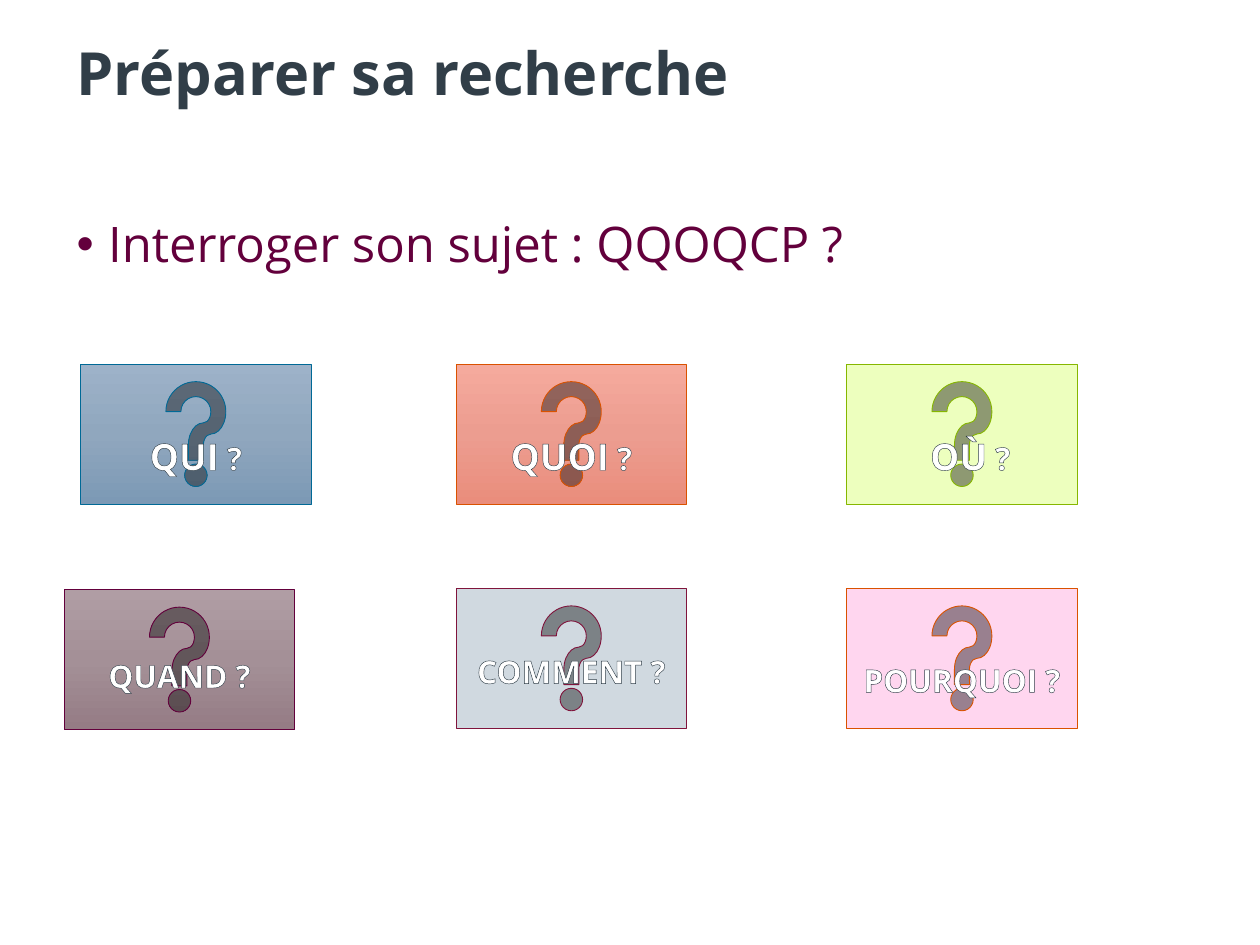
"""Build the QQOQCP slide: six question buttons under a title and a bullet."""
from lxml import etree
from pptx import Presentation
from pptx.dml.color import RGBColor
from pptx.enum.shapes import MSO_SHAPE
from pptx.enum.text import MSO_ANCHOR, PP_ALIGN
from pptx.oxml.ns import qn
from pptx.util import Inches, Pt

HELP_BUTTON = MSO_SHAPE.ACTION_BUTTON_HELP
MIDDLE, TOP = MSO_ANCHOR.MIDDLE, MSO_ANCHOR.TOP
CENTER = PP_ALIGN.CENTER

COLORS = {
    "white": "FFFFFF", "slate": "313E48", "outline": "303E48", "plum": "63003C",
    "blue": "006996", "orange": "DA5200", "green": "86B700", "wine": "80143C",
    "lime": "EDFFBE", "pink": "FFD6EF", "mist": "D0D9E0",
}
GRADIENTS = {
    "blue fade": ["9DB2C9", "90A7BE", "7C99B5"],
    "coral fade": ["F5AA9D", "EC9D90", "EA8D7C"],
    "plum fade": ["B09DA4", "A49097", "957C85"],
}


class QuestionSlide:
    """Hold the style and the current slide."""

    font_name = "Open Sans"
    button_width, button_height = 1.83, 1.11

    def __init__(self, presentation):
        self.slide = presentation.slides.add_slide(presentation.slide_layouts[6])

    def color(self, name):
        return RGBColor.from_string(COLORS[name])

    def style(self, font, size, color, bold=False):
        font.name, font.size, font.bold = self.font_name, Pt(size), bold
        font.color.rgb = self.color(color)

    def text(self, words, top, height, size, color, bold=False, anchor=TOP, bullet=False):
        box = self.slide.shapes.add_textbox(Inches(0.51), Inches(top), Inches(8.35), Inches(height))
        frame = box.text_frame
        frame.word_wrap, frame.vertical_anchor = True, anchor
        frame.text = words
        paragraph = frame.paragraphs[0]
        paragraph.line_spacing = 0.9
        if bullet:
            box.fill.solid()
            box.fill.fore_color.rgb = self.color("white")
            properties = paragraph._p.get_or_add_pPr()
            properties.set("marL", str(Inches(0.25)))
            properties.set("indent", str(-Inches(0.25)))
            etree.SubElement(properties, qn("a:buFont"), typeface="Arial")
            etree.SubElement(properties, qn("a:buChar"), char="•")
        self.style(paragraph.runs[0].font, size, color, bold)

    def gradient(self, button, stops):
        button.fill.gradient()
        button.fill.gradient_angle = 270
        stop_list = button._element.spPr.find(".//" + qn("a:gsLst"))
        for old_stop in list(stop_list):
            stop_list.remove(old_stop)
        for index, value in enumerate(stops):
            stop = etree.SubElement(stop_list, qn("a:gs"), pos=str(index * 50000))
            etree.SubElement(stop, qn("a:srgbClr"), val=value)

    def outline(self, run):
        line = etree.Element(qn("a:ln"), w=str(Pt(0.75)))
        solid = etree.SubElement(line, qn("a:solidFill"))
        etree.SubElement(solid, qn("a:srgbClr"), val=COLORS["outline"])
        run._r.get_or_add_rPr().insert(0, line)

    def button(self, word, left, top, fill, border, size, drop, shift=0):
        button = self.slide.shapes.add_shape(
            HELP_BUTTON, Inches(left), Inches(top),
            Inches(self.button_width), Inches(self.button_height))
        button.shadow.inherit = False
        if fill in GRADIENTS:
            self.gradient(button, GRADIENTS[fill])
        else:
            button.fill.solid()
            button.fill.fore_color.rgb = self.color(fill)
        button.line.color.rgb = self.color(border)
        button.line.width = Pt(0.5)

        frame = button.text_frame
        frame.word_wrap, frame.vertical_anchor = True, MIDDLE
        frame.margin_top = Inches(0.05 + drop)
        frame.margin_left = Inches(0.1 + shift)
        paragraph = frame.paragraphs[0]
        paragraph.alignment = CENTER
        for part, part_size in ((word, size), (" ?", 18)):
            run = paragraph.add_run()
            run.text = part
            self.style(run.font, part_size, "white", bold=True)
            self.outline(run)


def main():
    presentation = Presentation()
    presentation.slide_width, presentation.slide_height = Inches(10), Inches(7.5)
    page = QuestionSlide(presentation)
    page.text("Préparer sa recherche", 0.3, 0.61, 34, "slate", bold=True, anchor=MIDDLE)
    page.text("Interroger son sujet : QQOQCP ?", 1.7, 4.78, 28, "plum", bullet=True)

    upper, lower = 2.89, 4.67
    middle, right = 3.62, 6.72
    page.button("QUI", 0.64, upper, "blue fade", "blue", 21, 0.34)
    page.button("QUOI", middle, upper, "coral fade", "orange", 21, 0.34)
    page.button("OÙ", right, upper, "lime", "green", 21, 0.34, shift=0.13)
    page.button("QUAND", 0.51, lower + 0.01, "plum fade", "plum", 18, 0.25)
    page.button("COMMENT", middle, lower, "mist", "wine", 18, 0.2)
    page.button("POURQUOI", right, lower, "pink", "orange", 18, 0.34)
    presentation.save("out.pptx")


if __name__ == "__main__":
    main()
